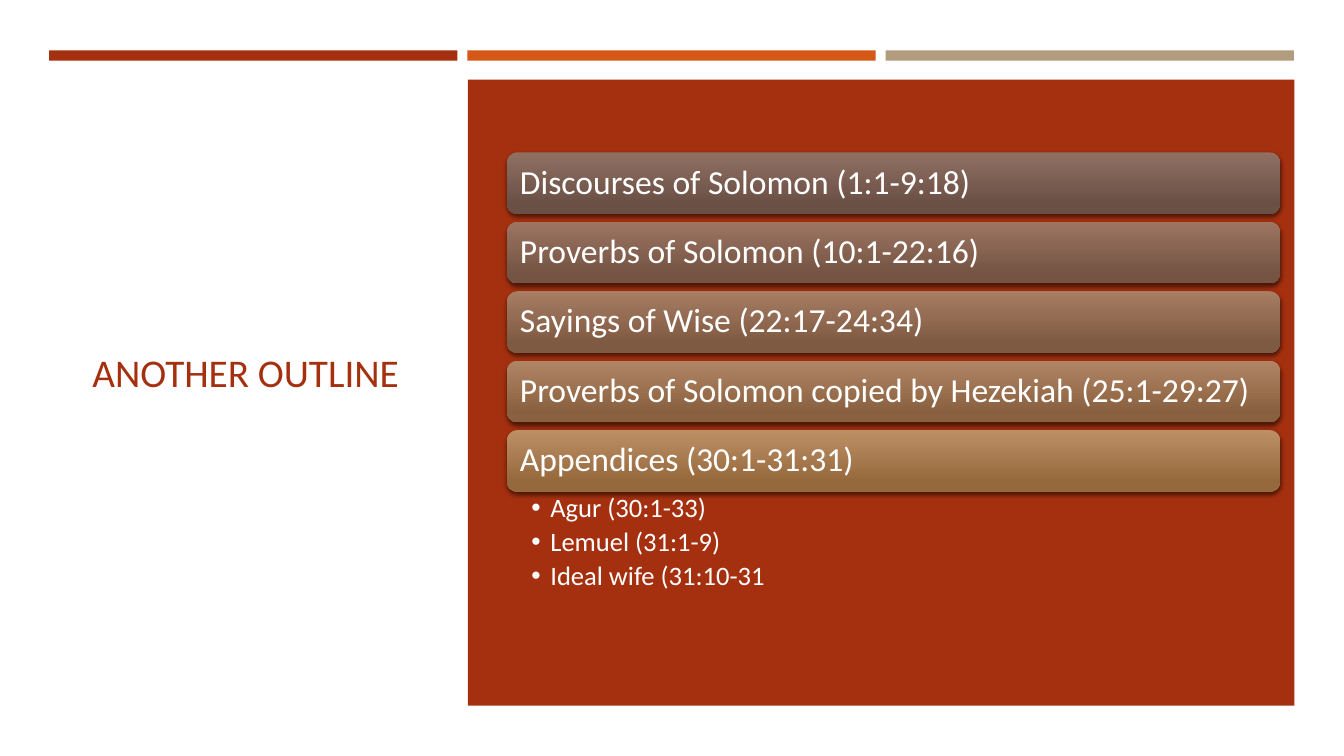
from lxml.etree import SubElement as Sub
from pptx import Presentation
from pptx.dml.color import RGBColor as Rgb
from pptx.enum.shapes import MSO_SHAPE as Kind
from pptx.enum.text import MSO_ANCHOR as Anchor, MSO_AUTO_SIZE as Fit, PP_ALIGN as Align
from pptx.oxml.ns import qn
from pptx.util import Cm, Pt

WHITE = Rgb(0xFF, 0xFF, 0xFF)
BLACK = Rgb(0x00, 0x00, 0x00)
RUST = Rgb(0xA5, 0x30, 0x0F)
ORANGE = Rgb(0xD5, 0x58, 0x16)
SAND = Rgb(0xB1, 0x9C, 0x7D)
FONT = "Calibri"

# Bar text, with the top and bottom colour of its gradient
PARTS = [
    ("Discourses of Solomon (1:1-9:18)", Rgb(0x90, 0x70, 0x63), Rgb(0x6B, 0x50, 0x45)),
    ("Proverbs of Solomon (10:1-22:16)", Rgb(0x9D, 0x75, 0x62), Rgb(0x75, 0x54, 0x44)),
    ("Sayings of Wise (22:17-24:34)", Rgb(0xA7, 0x7D, 0x63), Rgb(0x7F, 0x5A, 0x42)),
    ("Proverbs of Solomon copied by Hezekiah (25:1-29:27)",
     Rgb(0xB0, 0x85, 0x65), Rgb(0x8A, 0x61, 0x40)),
    ("Appendices (30:1-31:31)", Rgb(0xBC, 0x8F, 0x65), Rgb(0x96, 0x69, 0x3D)),
]
NOTES = ["Agur (30:1-33)", "Lemuel (31:1-9)", "Ideal wife (31:10-31"]


def place(shape, x, y, w, h):
    shape.left, shape.top, shape.width, shape.height = Cm(x), Cm(y), Cm(w), Cm(h)


def add_box(slide, kind, x, y, w, h):
    box = slide.shapes.add_shape(kind, Cm(x), Cm(y), Cm(w), Cm(h))
    box.shadow.inherit = False
    box.line.fill.background()
    return box


def add_rect(slide, color, x, y, w, h):
    box = add_box(slide, Kind.RECTANGLE, x, y, w, h)
    box.fill.solid()
    box.fill.fore_color.rgb = color


def set_frame(frame, anchor, left, top, right, low):
    frame.word_wrap = True
    frame.auto_size = Fit.NONE
    frame.vertical_anchor = anchor
    frame.margin_left, frame.margin_top = Cm(left), Cm(top)
    frame.margin_right, frame.margin_bottom = Cm(right), Cm(low)


def add_text(para, text, size, color):
    para.alignment = Align.LEFT
    para.line_spacing = 0.9
    para.space_before = Pt(0)
    run = para.add_run()
    run.text = text
    run.font.name, run.font.size = FONT, Pt(size)
    run.font.color.rgb = color


def cast_shadow(shape):
    effect = shape.element.spPr.find(qn("a:effectLst"))
    shade = Sub(effect, qn("a:outerShdw"), blurRad=str(Pt(3)), dist=str(Pt(2)),
                dir="5400000", algn="ctr", rotWithShape="0")
    tint = Sub(shade, qn("a:srgbClr"), val=str(BLACK))
    Sub(tint, qn("a:alpha"), val="55000")


# Three colour strips along the top
def add_strips(slide, x, y, w, h):
    gap = 0.25
    wide = (w - 2 * gap) / 3
    for i, color in enumerate([RUST, ORANGE, SAND]):
        add_rect(slide, color, x + i * (wide + gap), y, wide, h)


# Slide title on the left
def add_title(slide, x, y, w, h):
    title = slide.shapes.title
    place(title, x, y, w, h)
    set_frame(title.text_frame, Anchor.MIDDLE, 0.25, 0.13, 0.25, 0.13)
    add_text(title.text_frame.paragraphs[0], "ANOTHER OUTLINE", 28, RUST)


# One rounded bar of the outline
def add_bar(slide, part, x, y, w, h):
    text, light, dark = part
    bar = add_box(slide, Kind.ROUNDED_RECTANGLE, x, y, w, h)
    bar.fill.gradient()
    bar.fill.gradient_angle = 270
    for stop, color, spot in zip(bar.fill.gradient_stops, (light, dark), (0, 0.84)):
        stop.color.rgb, stop.position = color, spot
    cast_shadow(bar)
    set_frame(bar.text_frame, Anchor.MIDDLE, 0.25, 0.25, 0.25, 0.25)
    add_text(bar.text_frame.paragraphs[0], text, 24, WHITE)


# Bullets under the last bar, in the body placeholder
def add_notes(slide, x, y, w, h):
    body = slide.placeholders[1]
    body.element.getparent().append(body.element)  # in front of the panel
    place(body, x, y, w, h)
    frame = body.text_frame
    set_frame(frame, Anchor.TOP, 0.61, 0.08, 0.48, 0.08)
    for i, note in enumerate(NOTES):
        para = frame.add_paragraph() if i else frame.paragraphs[0]
        para.level = 1
        add_text(para, note, 19, WHITE)
        para.space_after = Pt(3.5)
        props = para._p.get_or_add_pPr()
        props.set("marL", str(Cm(0.48)))
        props.set("indent", str(-Cm(0.48)))
        Sub(props, qn("a:buChar"), char="•")


# Red panel with the outline
def add_panel(slide, x, y, w, h):
    add_rect(slide, RUST, x, y, w, h)
    left, top, wide, high, step = x + 0.99, y + 1.83, 19.48, 1.55, 1.75
    for i, part in enumerate(PARTS):
        add_bar(slide, part, left, top + i * step, wide, high)
    low = top + (len(PARTS) - 1) * step + high
    add_notes(slide, left, low, wide, 2.62)


def main():
    deck = Presentation()
    deck.slide_width, deck.slide_height = Cm(33.87), Cm(19.05)
    slide = deck.slides.add_slide(deck.slide_layouts[1])
    slide.background.fill.solid()
    slide.background.fill.fore_color.rgb = WHITE
    add_title(slide, 2.08, 2.9, 8.48, 13.08)
    add_strips(slide, 1.24, 1.27, 31.37, 0.26)
    add_panel(slide, 11.79, 2.01, 20.83, 15.77)
    deck.save("out.pptx")


if __name__ == "__main__":
    main()
